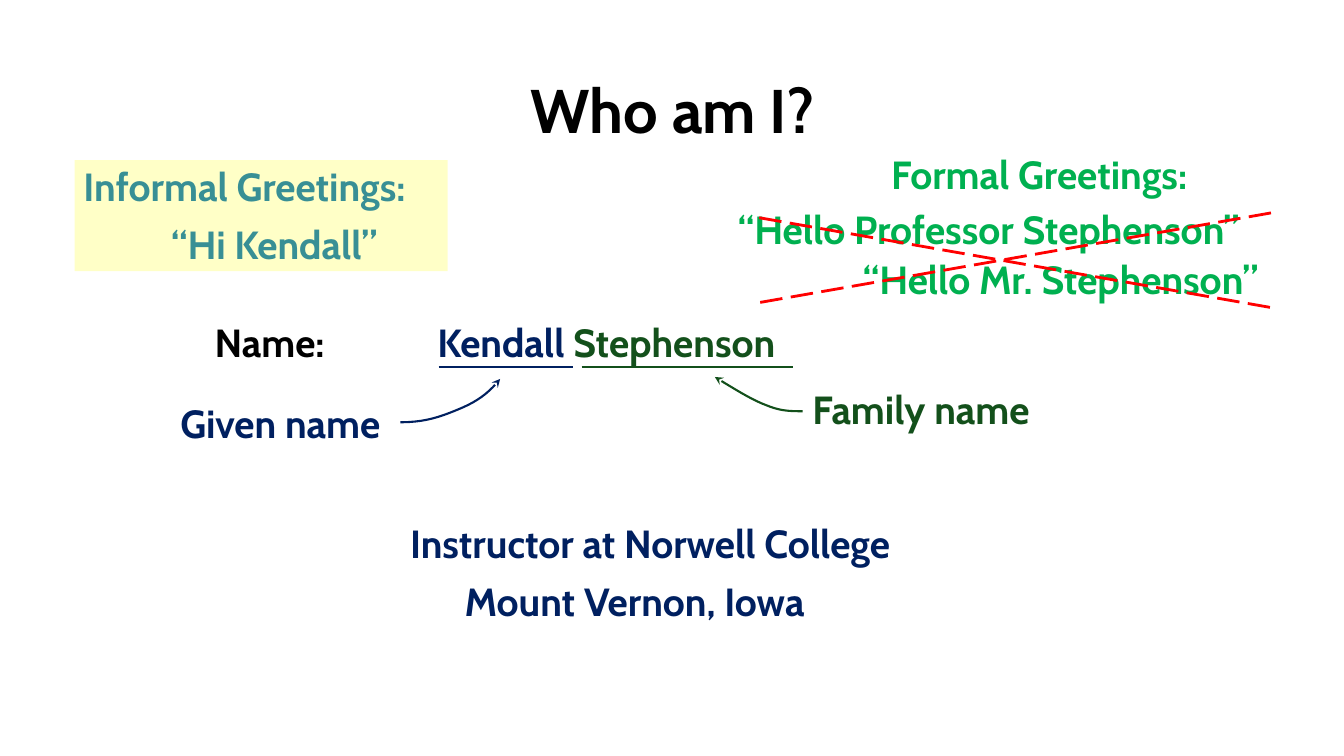
"""Build the "Who am I?" introduction slide."""
from dataclasses import dataclass

import lxml.etree
import pptx
import pptx.dml.color
import pptx.enum.dml
import pptx.enum.shapes
import pptx.enum.text
import pptx.oxml.ns
import pptx.util

Inches = pptx.util.Inches
Pt = pptx.util.Pt
FONT = "Cabin"
BLACK, NAVY, FOREST = "000000", "002060", "13501B"
GREEN, BLUE, RED, YELLOW = "00B050", "0070C0", "FF0000", "FFFF00"
LABEL_HEIGHT = 0.57
CURVE_STEPS = 10
Point = tuple[float, float]


@dataclass(frozen=True)
class Label:
    left: float
    top: float
    width: float
    phrases: tuple[tuple[str, str], ...]


@dataclass(frozen=True)
class Rule:
    start: Point
    end: Point
    color: str
    weight: float = 1.5
    dashed: bool = False


@dataclass(frozen=True)
class CurvedArrow:
    points: tuple[Point, ...]
    color: str


INFORMAL_LABELS = (
    Label(0.73, 1.56, 3.7, (("Informal Greetings:", BLUE),)),
    Label(1.6, 2.14, 2.86, (("“Hi Kendall”", BLUE),)),
)
LABELS = (
    Label(4.24, 3.11, 5.13, (("Kendall ", NAVY), ("Stephenson", FOREST))),
    Label(1.69, 3.91, 2.37, (("Given name", NAVY),)),
    Label(7.96, 3.77, 2.49, (("Family name", FOREST),)),
    Label(2.03, 3.11, 1.7, (("Name:", BLACK),)),
    Label(8.74, 1.44, 3.7, (("Formal Greetings:", GREEN),)),
    Label(7.22, 1.99, 5.73, (("“Hello Professor Stephenson”", GREEN),)),
    Label(8.46, 2.48, 4.59, (("“Hello Mr. Stephenson”", GREEN),)),
    Label(3.97, 5.1, 5.4, (("Instructor at Norwell College", NAVY),)),
    Label(4.51, 5.68, 4.86, (("Mount Vernon, Iowa", NAVY),)),
)
NAME_UNDERLINES = (
    Rule((4.35, 3.64), (5.68, 3.64), NAVY),
    Rule((5.77, 3.64), (7.87, 3.64), FOREST),
)
CROSS_OUT = (
    Rule((7.53, 2.16), (12.6, 3.05), RED, 2, True),
    Rule((7.54, 3), (12.62, 2.11), RED, 2, True),
)
NAME_ARROWS = (
    CurvedArrow(((3.97, 4.19), (4.23, 4.19), (4.38, 4.13), (4.55, 4.06),
                 (4.72, 3.99), (4.84, 3.91), (4.96, 3.76)), NAVY),
    CurvedArrow(((7.96, 4.08), (7.85, 4.08), (7.74, 4.08), (7.6, 4.02),
                 (7.46, 3.97), (7.27, 3.85), (7.09, 3.74)), FOREST),
)


def rgb(color: str) -> pptx.dml.color.RGBColor:
    return pptx.dml.color.RGBColor.from_string(color)


def add_xml(parent, tag: str, **attributes: str) -> None:
    child = lxml.etree.SubElement(parent, pptx.oxml.ns.qn(tag))
    for name, setting in attributes.items():
        child.set(name, setting)


def format_run(run, size: float, color: str) -> None:
    run.font.name = FONT
    run.font.size = Pt(size)
    run.font.bold = True
    run.font.color.rgb = rgb(color)


def add_title(slide) -> None:
    title = slide.shapes.title
    title.left, title.top = Inches(0.92), Inches(0.4)
    title.width, title.height = Inches(11.5), Inches(1.45)
    title.text_frame.text = "Who am I?"
    title.text_frame.vertical_anchor = pptx.enum.text.MSO_ANCHOR.MIDDLE
    heading = title.text_frame.paragraphs[0]
    heading.alignment = pptx.enum.text.PP_ALIGN.CENTER
    heading.line_spacing = 0.9
    format_run(heading.runs[0], 44, BLACK)


def add_label(slide, label: Label) -> None:
    frame = slide.shapes.add_textbox(
        Inches(label.left), Inches(label.top),
        Inches(label.width), Inches(LABEL_HEIGHT)).text_frame
    frame.word_wrap = True
    frame.auto_size = pptx.enum.text.MSO_AUTO_SIZE.SHAPE_TO_FIT_TEXT
    for wording, color in label.phrases:
        run = frame.paragraphs[0].add_run()
        run.text = wording
        format_run(run, 28, color)


def add_rule(shapes, rule: Rule) -> None:
    stroke = shapes.add_connector(
        pptx.enum.shapes.MSO_CONNECTOR.STRAIGHT,
        *(Inches(length) for length in rule.start + rule.end))
    stroke.line.color.rgb = rgb(rule.color)
    stroke.line.width = Pt(rule.weight)
    if rule.dashed:
        stroke.line.dash_style = pptx.enum.dml.MSO_LINE.LONG_DASH
    add_xml(stroke._element.spPr, "a:effectLst")


def bezier_point(controls: tuple[Point, ...], t: float) -> tuple[int, int]:
    weights = ((1 - t) ** 3, 3 * t * (1 - t) ** 2, 3 * t ** 2 * (1 - t), t ** 3)
    x, y = (sum(weight * control[axis] for weight, control in zip(weights, controls))
            for axis in (0, 1))
    return Inches(x), Inches(y)


def add_curved_arrow(slide, arrow: CurvedArrow) -> None:
    bends = [arrow.points[first:first + 4] for first in range(0, len(arrow.points) - 1, 3)]
    trace = [bezier_point(bend, step / CURVE_STEPS)
             for bend in bends for step in range(1, CURVE_STEPS + 1)]
    builder = slide.shapes.build_freeform(*bezier_point(bends[0], 0))
    builder.add_line_segments(trace, close=False)
    curve = builder.convert_to_shape()
    curve.shadow.inherit = False
    curve.fill.background()
    curve.line.color.rgb = rgb(arrow.color)
    curve.line.width = Pt(1.5)
    outline = curve._element.spPr.find(pptx.oxml.ns.qn("a:ln"))
    add_xml(outline, "a:tailEnd", type="stealth")


def add_highlight(slide) -> None:
    highlight = slide.shapes.add_shape(
        pptx.enum.shapes.MSO_SHAPE.RECTANGLE,
        Inches(0.74), Inches(1.59), Inches(3.7), Inches(1.1))
    highlight.shadow.inherit = False
    highlight.line.fill.background()
    highlight.fill.solid()
    highlight.fill.fore_color.rgb = rgb(YELLOW)
    tint = highlight._element.spPr.find(".//" + pptx.oxml.ns.qn("a:srgbClr"))
    add_xml(tint, "a:alpha", val="22000")


def main() -> None:
    deck = pptx.Presentation()
    deck.slide_width, deck.slide_height = Inches(13.33), Inches(7.5)
    slide = deck.slides.add_slide(deck.slide_layouts.get_by_name("Title Only"))
    add_title(slide)
    for label in INFORMAL_LABELS:
        add_label(slide, label)
    add_highlight(slide)
    for label in LABELS:
        add_label(slide, label)
    for underline in NAME_UNDERLINES:
        add_rule(slide.shapes, underline)
    for arrow in NAME_ARROWS:
        add_curved_arrow(slide, arrow)
    cross = slide.shapes.add_group_shape()
    for stroke in CROSS_OUT:
        add_rule(cross.shapes, stroke)
    deck.save("out.pptx")


if __name__ == "__main__":
    main()
